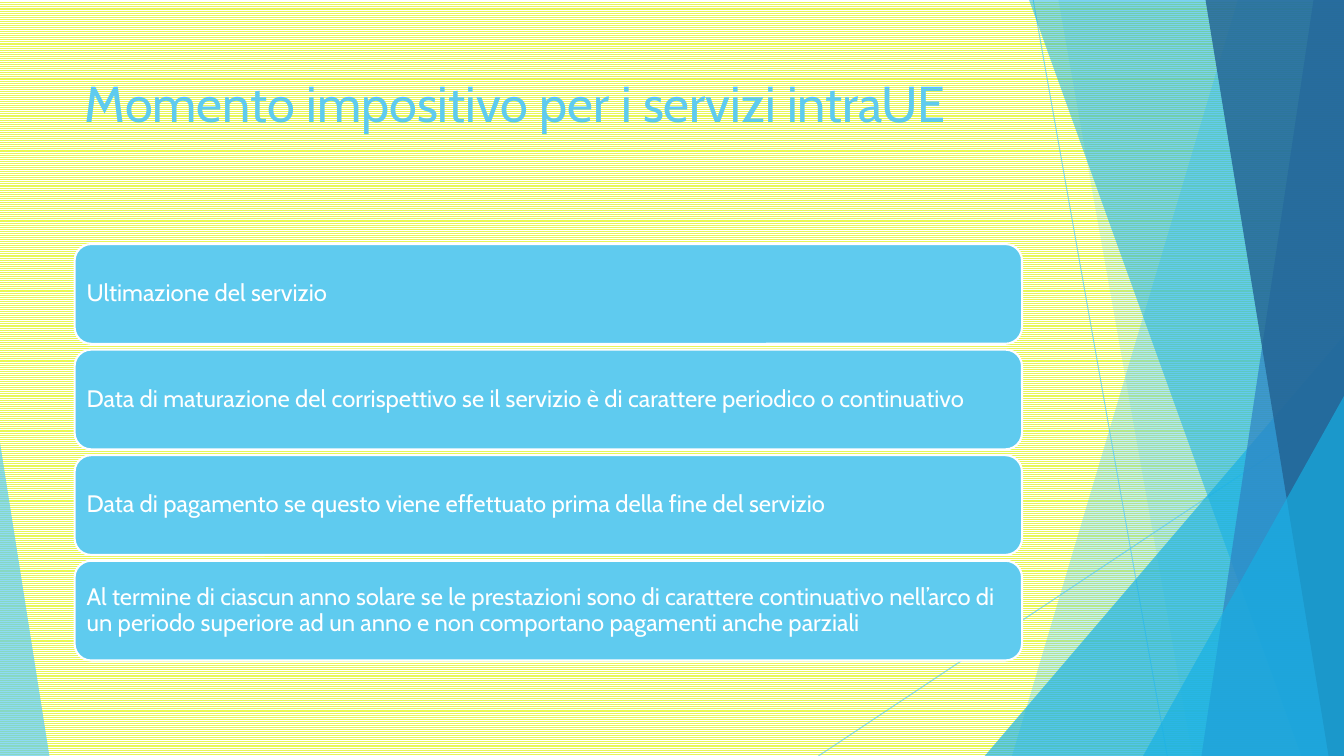
from dataclasses import dataclass

from lxml.etree import SubElement
from pptx import Presentation
from pptx.dml.color import RGBColor
from pptx.enum.dml import MSO_PATTERN
from pptx.enum.shapes import MSO_CONNECTOR, MSO_SHAPE
from pptx.enum.text import MSO_ANCHOR as Anchor, MSO_AUTO_SIZE, PP_ALIGN as Align
from pptx.oxml.ns import qn
from pptx.shapes.autoshape import Shape
from pptx.shapes.shapetree import SlideShapes
from pptx.slide import Slide
from pptx.util import Pt

WIDTH, HEIGHT = 960, 540
FONT = "Cabin"
COLORS = {
    "sky": "5FCBEF",
    "cyan": "17B0E4",
    "blue": "2E83C3",
    "navy": "226292",
    "yellow": "E8F757",
    "white": "FFFFFF",
}


@dataclass
class Ray:
    start: tuple[float, float]
    end: tuple[float, float]


@dataclass
class Facet:
    """A band from a slanted left edge to the right side of the slide."""
    top_x: float
    bottom_x: float
    color: str
    opacity: int


@dataclass
class Corner:
    """A triangle standing on the bottom edge, its apex at a share of its width."""
    left: float
    top: float
    width: float
    apex: float
    color: str
    opacity: int


RAYS = [Ray((738, 0), (833.8, HEIGHT)), Ray((WIDTH, 290.2), (584.6, HEIGHT))]
DECORATION = [
    Facet(884.2, 722.9, "sky", 36),
    Facet(756, 851.8, "sky", 20),
    Corner(703.4, 239.8, 256.6, 1, "cyan", 66),
    Facet(735.1, 929.5, "cyan", 50),
    Facet(938.2, 858.2, "blue", 70),
    Facet(861.1, 949, "navy", 80),
    Corner(816.5, 283, 143.5, 1, "cyan", 66),
    Corner(0, 316.1, 35.3, 0, "sky", 70),
]

TITLE = "Momento impositivo per i servizi intraUE"
MOMENTS = [
    "Ultimazione del servizio",
    "Data di maturazione del corrispettivo se il servizio è di carattere periodico o continuativo",
    "Data di pagamento se questo viene effettuato prima della fine del servizio",
    "Al termine di ciascun anno solare se le prestazioni sono di carattere continuativo "
    "nell’arco di un periodo superiore ad un anno e non comportano pagamenti anche parziali",
]
LEFT, CONTENT_WIDTH = 53.3, 676.8
FIRST_TOP, ROW_HEIGHT, ROW_PITCH = 174.3, 71.3, 75.4


def rgb(name: str) -> RGBColor:
    return RGBColor.from_string(COLORS[name])


def set_opacity(element, percent: int) -> None:
    """Add transparency to the colour of a solid fill or line."""
    color = next(element.iter(qn("a:srgbClr")))
    SubElement(color, qn("a:alpha"), val=str(percent * 1000))


def fill_shape(shape: Shape, color: str, opacity: int = 100) -> None:
    shape.shadow.inherit = False
    shape.fill.solid()
    shape.fill.fore_color.rgb = rgb(color)
    if opacity < 100:
        set_opacity(shape.fill._xPr, opacity)
    shape.line.fill.background()


def write_text(shape: Shape, text: str, *, size: float, color: str, anchor: Anchor,
               inset: tuple[float, float], spacing: float = 1) -> None:
    """Set left-aligned text; inset is horizontal, then vertical."""
    frame = shape.text_frame
    frame.word_wrap = True
    frame.auto_size = MSO_AUTO_SIZE.NONE
    frame.vertical_anchor = anchor
    frame.margin_left = frame.margin_right = Pt(inset[0])
    frame.margin_top = frame.margin_bottom = Pt(inset[1])
    para = frame.paragraphs[0]
    para.alignment = Align.LEFT
    para.line_spacing = spacing
    span = para.add_run()
    span.text = text
    span.font.name = FONT
    span.font.size = Pt(size)
    span.font.color.rgb = rgb(color)


def draw_ray(shapes: SlideShapes, ray: Ray) -> None:
    points = [Pt(value) for value in (*ray.start, *ray.end)]
    line = shapes.add_connector(MSO_CONNECTOR.STRAIGHT, *points)
    line.line.color.rgb = rgb("sky")
    line.line.width = Pt(0.75)
    properties = line._element.spPr
    set_opacity(properties, 70)
    SubElement(properties, qn("a:effectLst"))


def draw_facet(shapes: SlideShapes, facet: Facet) -> None:
    builder = shapes.build_freeform(Pt(facet.top_x), 0)
    corners = [(WIDTH, 0), (WIDTH, HEIGHT), (facet.bottom_x, HEIGHT)]
    builder.add_line_segments([(Pt(x), Pt(y)) for x, y in corners], close=True)
    fill_shape(builder.convert_to_shape(), facet.color, facet.opacity)


def draw_corner(shapes: SlideShapes, corner: Corner) -> None:
    triangle = shapes.add_shape(
        MSO_SHAPE.ISOSCELES_TRIANGLE, Pt(corner.left), Pt(corner.top),
        Pt(corner.width), Pt(HEIGHT - corner.top))
    triangle.adjustments[0] = corner.apex
    fill_shape(triangle, corner.color, corner.opacity)


def draw_moment(shapes: SlideShapes, row: int, text: str) -> None:
    box = shapes.add_shape(
        MSO_SHAPE.ROUNDED_RECTANGLE, Pt(LEFT), Pt(FIRST_TOP + row * ROW_PITCH),
        Pt(CONTENT_WIDTH), Pt(ROW_HEIGHT))
    fill_shape(box, "sky")
    box.line.color.rgb = rgb("white")
    box.line.width = Pt(1.5)
    write_text(box, text, size=17, color="white", anchor=Anchor.MIDDLE,
               inset=(5.1, 5.1), spacing=0.9)


def set_background(slide: Slide) -> None:
    fill = slide.background.fill
    fill.patterned()
    fill.pattern = MSO_PATTERN.LIGHT_HORIZONTAL
    fill.fore_color.rgb = rgb("yellow")
    fill.back_color.rgb = rgb("white")


def place_title(slide: Slide) -> None:
    title = slide.shapes.title
    title.left, title.top = Pt(LEFT), Pt(48)
    title.width, title.height = Pt(CONTENT_WIDTH), Pt(104)
    write_text(title, TITLE, size=36, color="sky", anchor=Anchor.TOP, inset=(7.2, 3.6))


def main() -> None:
    deck = Presentation()
    deck.slide_width, deck.slide_height = Pt(WIDTH), Pt(HEIGHT)
    slide = deck.slides.add_slide(deck.slide_layouts[5])
    set_background(slide)
    place_title(slide)
    for ray in RAYS:
        draw_ray(slide.shapes, ray)
    for piece in DECORATION:
        if isinstance(piece, Facet):
            draw_facet(slide.shapes, piece)
        else:
            draw_corner(slide.shapes, piece)
    for row, text in enumerate(MOMENTS):
        draw_moment(slide.shapes, row, text)
    deck.save("out.pptx")


if __name__ == "__main__":
    main()
